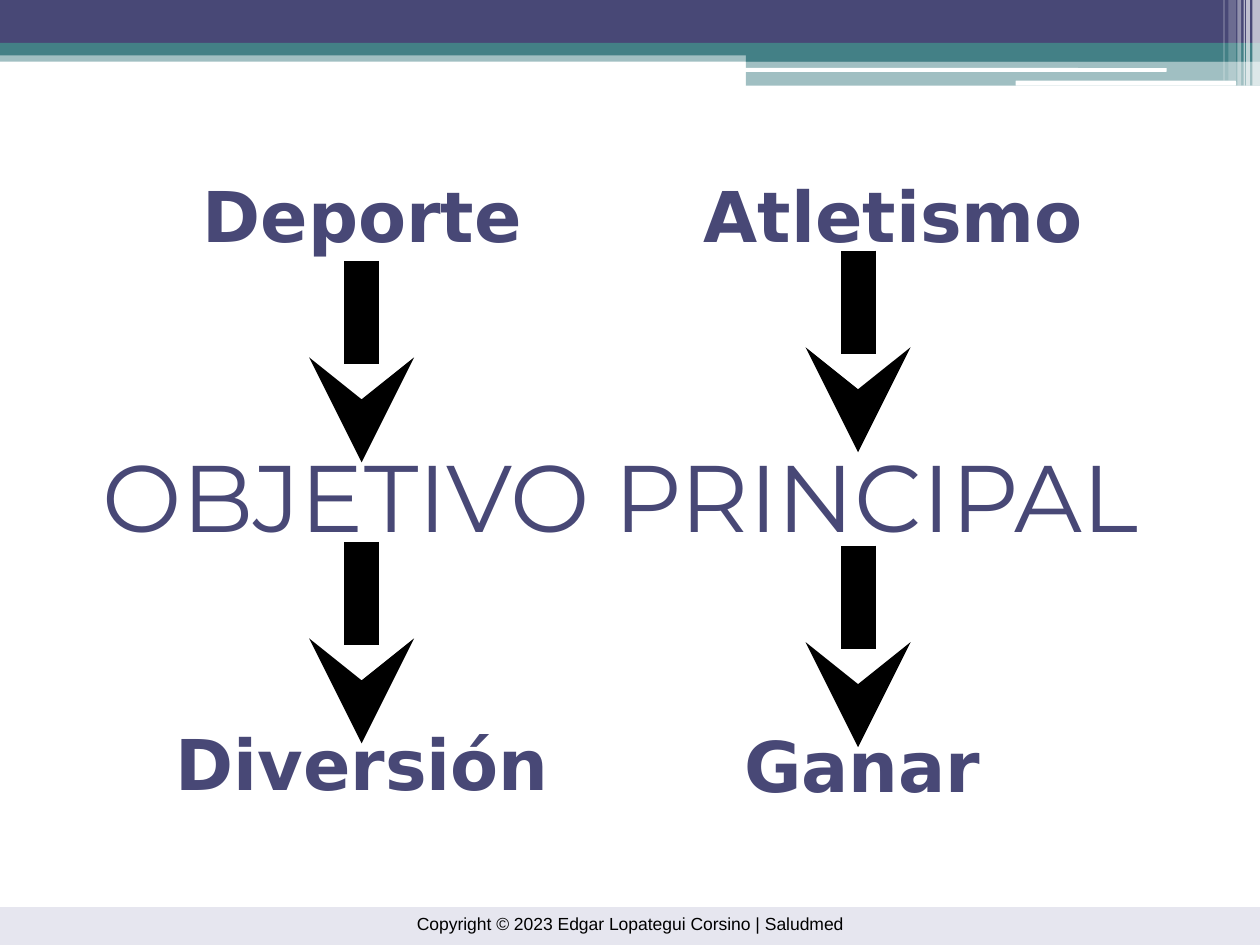
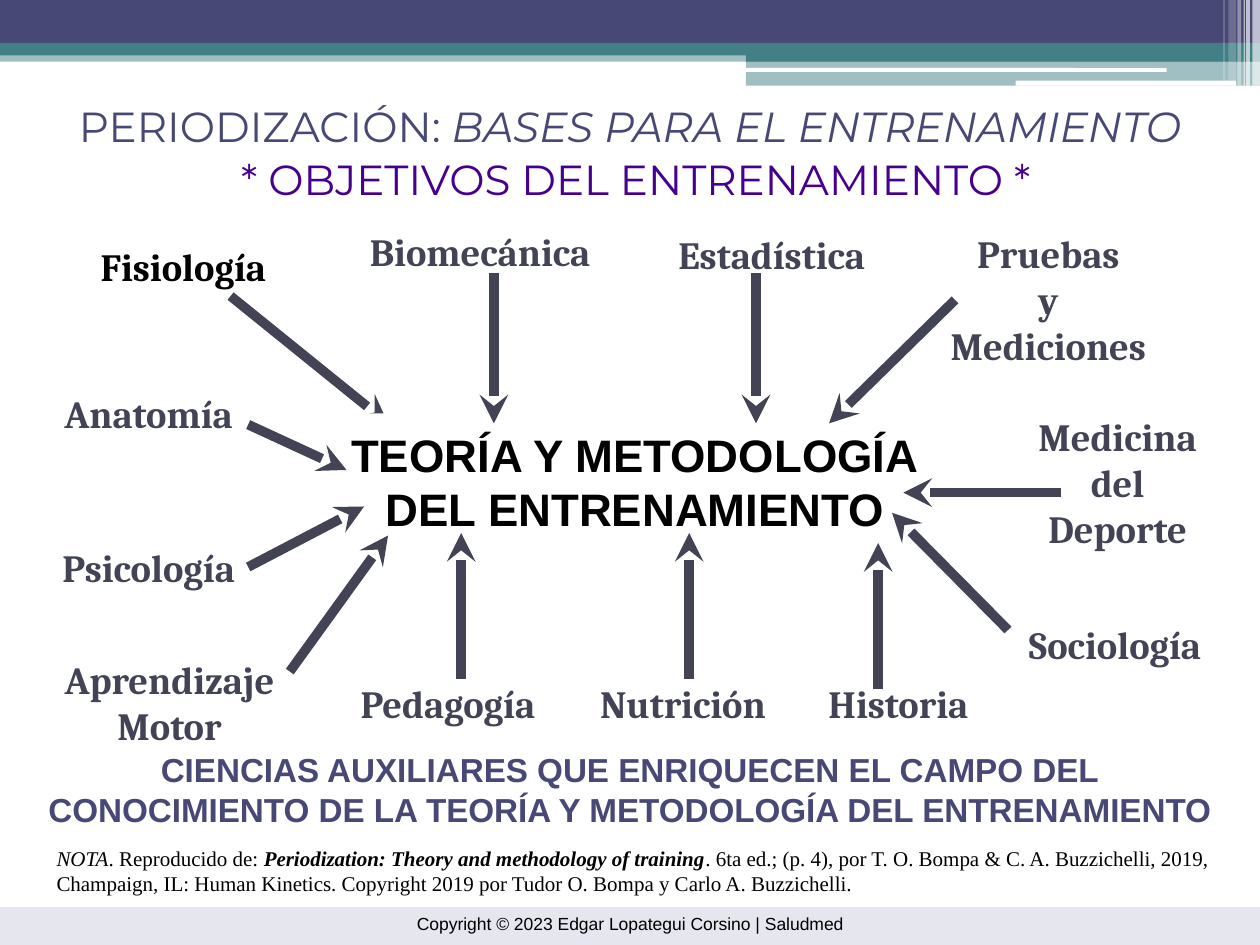
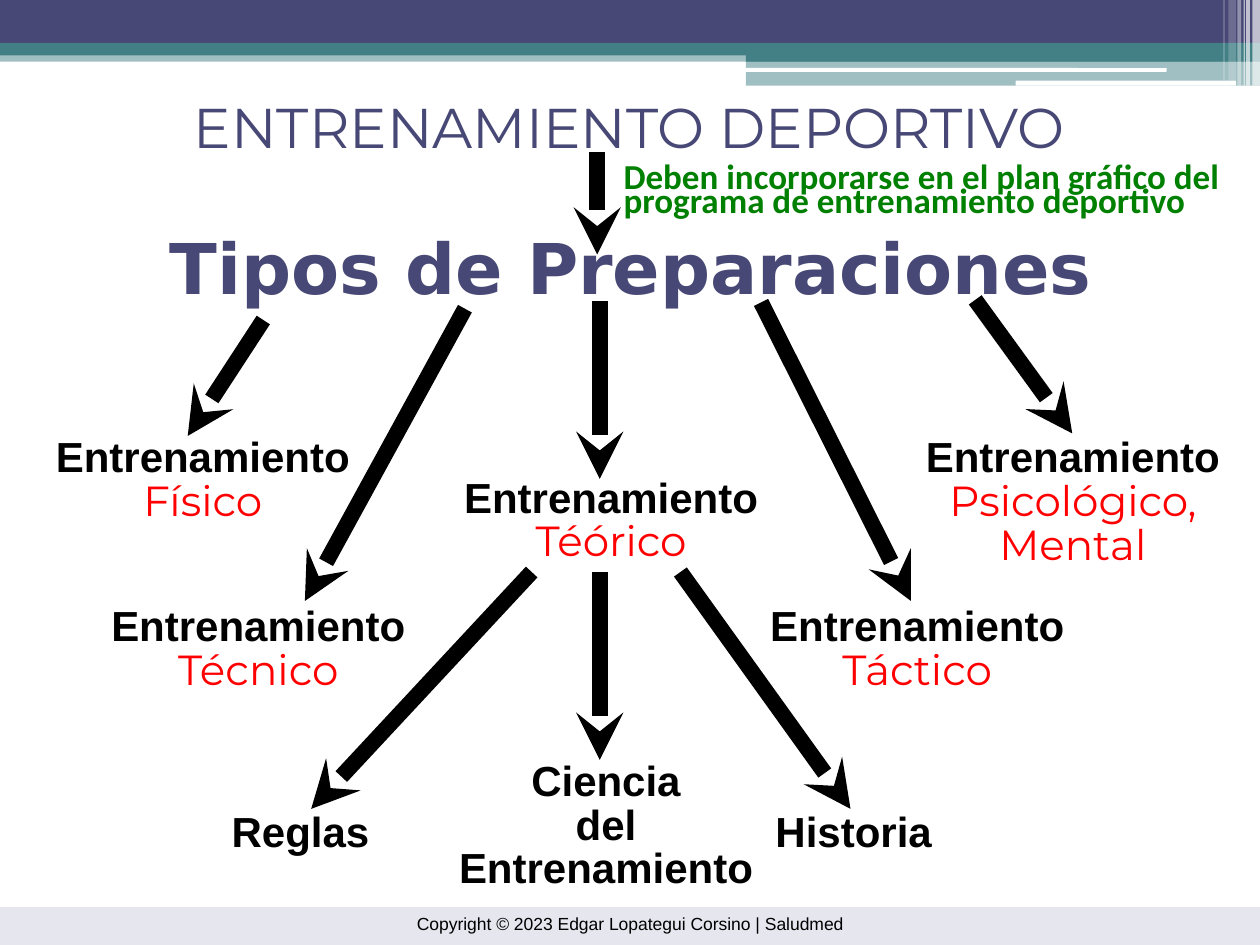
"""Build three slides on sports training: main goals, auxiliary sciences and types of preparation."""
from lxml import etree
from pptx import Presentation
from pptx.dml.color import RGBColor
from pptx.enum import shapes, text
from pptx.oxml.ns import qn
from pptx.util import Inches, Pt

COLORS = {"indigo": "484876", "teal": "438086", "white": "FFFFFF", "black": "000000",
          "slate": "424456", "violet": "47008E", "red": "FF0000", "green": "008000",
          "footer": "E6E6EF"}

# size, font, colour, bold, italic
STYLES = {
    "footer": (10, "Arial", "black", False, False),
    "huge": (54, "Montserrat", "indigo", False, False),
    "title": (32, "Montserrat", "indigo", False, False),
    "heading": (24, "Montserrat", "indigo", False, False),
    "heading_it": (24, "Montserrat", "indigo", False, True),
    "subtitle": (24, "Montserrat", "violet", False, False),
    "concept": (40, "DejaVu Sans", "indigo", True, False),
    "science": (22, "Cambria", "slate", True, False),
    "science_key": (22, "Cambria", "black", True, False),
    "hub": (26, "Arial", "black", True, False),
    "summary": (19, "Arial", "indigo", True, False),
    "note": (12, "Times New Roman", "black", False, False),
    "note_it": (12, "Times New Roman", "black", False, True),
    "note_book": (12, "Times New Roman", "black", True, True),
    "training": (24, "Arial", "black", True, False),
    "kind": (24, "Montserrat", "red", False, False),
    "advice": (20, "Calibri", "green", True, False),
}

RECT, ROUND = shapes.MSO_SHAPE.RECTANGLE, shapes.MSO_SHAPE.ROUNDED_RECTANGLE
# left, top, width, height, colour, opacity, preset
BANDS = [
    (0, 0.4, 10, 0.09, "teal", 50, RECT),
    (0, 0, 10, 0.34, "indigo", 100, RECT),
    (0, 0.34, 10, 0.1, "teal", 100, RECT),
    (5.92, 0.39, 4.08, 0.1, "teal", 100, RECT),
    (5.92, 0.48, 4.08, 0.2, "teal", 50, RECT),
    (5.91, 0.54, 3.35, 0.03, "white", 100, ROUND),
    (8.06, 0.64, 1.75, 0.04, "white", 100, ROUND),
    (9.94, 0, 0.06, 0.68, "white", 65, RECT),
    (9.89, 0, 0.03, 0.68, "white", 65, RECT),
    (9.87, 0, 0.01, 0.68, "white", 60, RECT),
    (9.82, 0, 0.03, 0.68, "white", 40, RECT),
    (9.75, 0, 0.06, 0.64, "white", 20, RECT),
    (9.71, 0, 0.01, 0.64, "white", 30, RECT),
]
FOOTER = "Copyright © 2023 Edgar Lopategui Corsino | Saludmed"

GOALS = [
    ("Deporte", (1.18, 1.47, 3.39, 0.55)),
    ("Atletismo", (5.24, 1.47, 3.7, 0.55)),
    ("Diversión", (1.18, 5.82, 3.39, 0.55)),
    ("Ganar", (4.76, 5.64, 4.17, 0.94)),
]
GOAL_ARROWS = [(x, y, x, y + 1.6) for x, y in
               [(2.87, 2.07), (6.81, 1.99), (2.87, 4.3), (6.81, 4.33)]]

SCIENCES = [
    (["Biomecánica"], (2.85, 1.74, 1.92, 0.5)),
    (["Estadística"], (5.21, 1.77, 1.83, 0.5)),
    (["Pruebas", "y", "Mediciones"], (7.36, 1.75, 1.92, 1.25)),
    (["Anatomía"], (0.39, 3.03, 1.58, 0.5)),
    (["Psicología"], (0.39, 4.25, 1.58, 0.5)),
    (["Aprendizaje", "Motor"], (0.47, 5.11, 1.75, 0.92)),
    (["Pedagogía"], (2.72, 5.33, 1.67, 0.5)),
    (["Nutrición"], (4.63, 5.33, 1.58, 0.5)),
    (["Historia"], (6.34, 5.33, 1.58, 0.5)),
    (["Sociología"], (8.06, 4.86, 1.58, 0.5)),
    (["Medicina", "del", "Deporte"], (8.08, 3.2, 1.58, 1.25)),
]
PHYSIOLOGY_ARROW = (1.83, 2.35, 3.08, 3.36)
SCIENCE_ARROWS = [
    (3.92, 2.17, 3.92, 3.36), (6, 2.17, 6, 3.36), (7.58, 2.38, 6.58, 3.36),
    (1.97, 4.5, 2.89, 4.02), (1.97, 3.37, 2.75, 3.73), (8.42, 3.91, 7.17, 3.91),
    (2.3, 5.33, 3.08, 4.25), (6.97, 5.47, 6.97, 4.31), (5.47, 5.39, 5.47, 4.23),
    (3.66, 5.39, 3.66, 4.23), (8, 5, 7.08, 4.07),
]
HUB = ["TEORÍA Y METODOLOGÍA", "DEL ENTRENAMIENTO"]
SUMMARY = ["CIENCIAS AUXILIARES QUE ENRIQUECEN EL CAMPO DEL",
           "CONOCIMIENTO DE LA TEORÍA Y METODOLOGÍA DEL ENTRENAMIENTO"]
NOTE = [
    ("NOTA", "note_it"), (". Reproducido de: ", "note"),
    ("Periodization: Theory and methodology of training", "note_book"),
    (". 6ta ed.; (p. 4), por T. O. Bompa & C. A. Buzzichelli, 2019, Champaign, IL: "
     "Human Kinetics. Copyright 2019 por Tudor O. Bompa y Carlo A. Buzzichelli.", "note"),
]

TRAININGS = [
    (["Físico"], (0.26, 3.48, 2.7, 0.74)),
    (["Psicológico,", "Mental"], (7.23, 3.48, 2.57, 1.06)),
    (["Técnico"], (0.7, 4.82, 2.7, 0.74)),
    (["Táctico"], (5.93, 4.82, 2.7, 0.74)),
    (["Téórico"], (3.5, 3.8, 2.7, 0.74)),
]
THEORY_TOPICS = [
    (["Reglas"], (1.72, 6.45, 1.33, 0.37)),
    (["Historia"], (6.03, 6.45, 1.49, 0.37)),
    (["Ciencia", "del", "Entrenamiento"], (3.46, 6.05, 2.7, 0.76)),
]
TRAINING_ARROWS = [
    (4.74, 1.21, 4.74, 2.02), (3.69, 2.45, 2.42, 4.77), (2.09, 2.54, 1.49, 3.46),
    (6.04, 2.4, 7.23, 4.77), (7.74, 2.38, 8.51, 3.44), (4.76, 2.39, 4.76, 3.8),
    (4.22, 4.54, 2.47, 6.42), (5.4, 4.54, 6.75, 6.42), (4.76, 4.54, 4.76, 6.03),
]
ADVICE = ["Deben incorporarse en el plan gráfico del", "programa de entrenamiento deportivo"]

CENTER, LEFT = text.PP_ALIGN.CENTER, text.PP_ALIGN.LEFT
MIDDLE, TOP = text.MSO_ANCHOR.MIDDLE, text.MSO_ANCHOR.TOP


def color(name):
    return RGBColor.from_string(COLORS[name])


def lines(items, style):
    return [[(item, style)] for item in items]


def add_text_shadow(r):
    fill = r.font._element.find(qn("a:solidFill"))
    effects = etree.Element(qn("a:effectLst"))
    shadow = etree.SubElement(effects, qn("a:outerShdw"), blurRad="38100", dist="38100",
                              dir="2700000", algn="tl")
    etree.SubElement(shadow, qn("a:srgbClr"), val="C0C0C0")
    fill.addnext(effects)


def write(sp, paragraphs, align=CENTER, anchor=MIDDLE, wrap=True, spacing=None, before=0,
          shadow=False):
    tf = sp.text_frame
    tf.word_wrap = wrap
    tf.auto_size = text.MSO_AUTO_SIZE.NONE
    tf.vertical_anchor = anchor
    for i, runs in enumerate(paragraphs):
        p = tf.add_paragraph() if i else tf.paragraphs[0]
        p.alignment = align
        if spacing:
            p.line_spacing = spacing
        if i and before:
            p.space_before = Pt(before)
        for words, style in runs:
            size, font, ink, bold, italic = STYLES[style]
            r = p.add_run()
            r.text = words
            r.font.size, r.font.name = Pt(size), font
            r.font.bold, r.font.italic = bold, italic
            r.font.color.rgb = color(ink)
            if shadow:
                add_text_shadow(r)
    return tf


def add_label(s, box, paragraphs, **options):
    return write(s.shapes.add_textbox(*map(Inches, box)), paragraphs, **options)


def add_block(s, box, fill, opacity=100, preset=RECT):
    sp = s.shapes.add_shape(preset, *map(Inches, box))
    sp.shadow.inherit = False
    sp.fill.solid()
    sp.fill.fore_color.rgb = color(fill)
    sp.line.fill.background()
    if opacity < 100:
        ink = sp._element.spPr.find(qn("a:solidFill"))[0]
        etree.SubElement(ink, qn("a:alpha"), val=str(opacity * 1000))
    return sp


def add_arrows(s, arrows, ink, width):
    for ends in arrows:
        c = s.shapes.add_connector(shapes.MSO_CONNECTOR.STRAIGHT, *map(Inches, ends))
        c.line.color.rgb = color(ink)
        c.line.width = Pt(width)
        etree.SubElement(c.line._get_or_add_ln(), qn("a:tailEnd"), type="stealth")
        etree.SubElement(c._element.spPr, qn("a:effectLst"))


def add_slide(prs, box, title, spacing=0.9):
    s = prs.slides.add_slide(prs.slide_layouts[5])
    for *place, fill, opacity, preset in BANDS:
        add_block(s, place, fill, opacity, preset)
    write(add_block(s, (0, 7.2, 10, 0.3), "footer"), [[(FOOTER, "footer")]], anchor=TOP)
    sp = s.shapes.title
    sp.left, sp.top, sp.width, sp.height = map(Inches, box)
    write(sp, [title], spacing=spacing)
    return s


def build_goals(prs):
    s = add_slide(prs, (0.28, 3.63, 9.29, 0.71), [("OBJETIVO PRINCIPAL", "huge")])
    add_arrows(s, GOAL_ARROWS, "black", 20)
    for goal, box in GOALS:
        add_label(s, box, lines([goal], "concept"), spacing=0.9)


def build_sciences(prs):
    s = add_slide(prs, (0, 0.77, 10, 0.46),
                  [("PERIODIZACIÓN: ", "heading"),
                   ("BASES PARA EL ENTRENAMIENTO", "heading_it")], spacing=None)
    add_label(s, (1.46, 1.19, 7.17, 0.51),
              lines(["* OBJETIVOS DEL ENTRENAMIENTO *"], "subtitle"), spacing=0.9)
    add_arrows(s, [PHYSIOLOGY_ARROW], "slate", 5.5)
    write(add_block(s, (2.58, 3.28, 4.92, 1.08), "white"), lines(HUB, "hub"), wrap=False)
    add_label(s, (0.58, 1.86, 1.75, 0.5), lines(["Fisiología"], "science_key"), wrap=False)
    for names, box in SCIENCES:
        add_label(s, box, lines(names, "science"), wrap=False)
    add_arrows(s, SCIENCE_ARROWS, "slate", 5.5)
    tf = add_label(s, (0, 5.95, 10, 0.64), lines(SUMMARY, "summary"), anchor=TOP)
    tf.margin_left = tf.margin_right = tf.margin_top = tf.margin_bottom = 0
    add_label(s, (0.35, 6.66, 9.38, 0.39), [NOTE], align=LEFT, anchor=TOP)


def build_trainings(prs):
    s = add_slide(prs, (1.06, 0.76, 7.87, 0.55), [("ENTRENAMIENTO DEPORTIVO", "title")])
    add_label(s, (1.21, 1.88, 7.59, 0.55), lines(["Tipos de Preparaciones"], "concept"),
              spacing=0.9)
    add_arrows(s, TRAINING_ARROWS, "black", 9)
    labels = [(lines(["Entrenamiento"], "training") + lines(kinds, "kind"), box)
              for kinds, box in TRAININGS]
    labels += [(lines(topic, "training"), box) for topic, box in THEORY_TOPICS]
    for paragraphs, box in labels:
        add_label(s, box, paragraphs, anchor=TOP, spacing=0.7, before=4.8, shadow=True)
    add_label(s, (4.85, 1.37, 4.99, 0.42), lines(ADVICE, "advice"), align=LEFT, anchor=TOP,
              spacing=Pt(10), before=4, shadow=True)


def main():
    prs = Presentation()
    prs.slide_width, prs.slide_height = Inches(10), Inches(7.5)
    build_goals(prs)
    build_sciences(prs)
    build_trainings(prs)
    prs.save("out.pptx")


if __name__ == "__main__":
    main()
